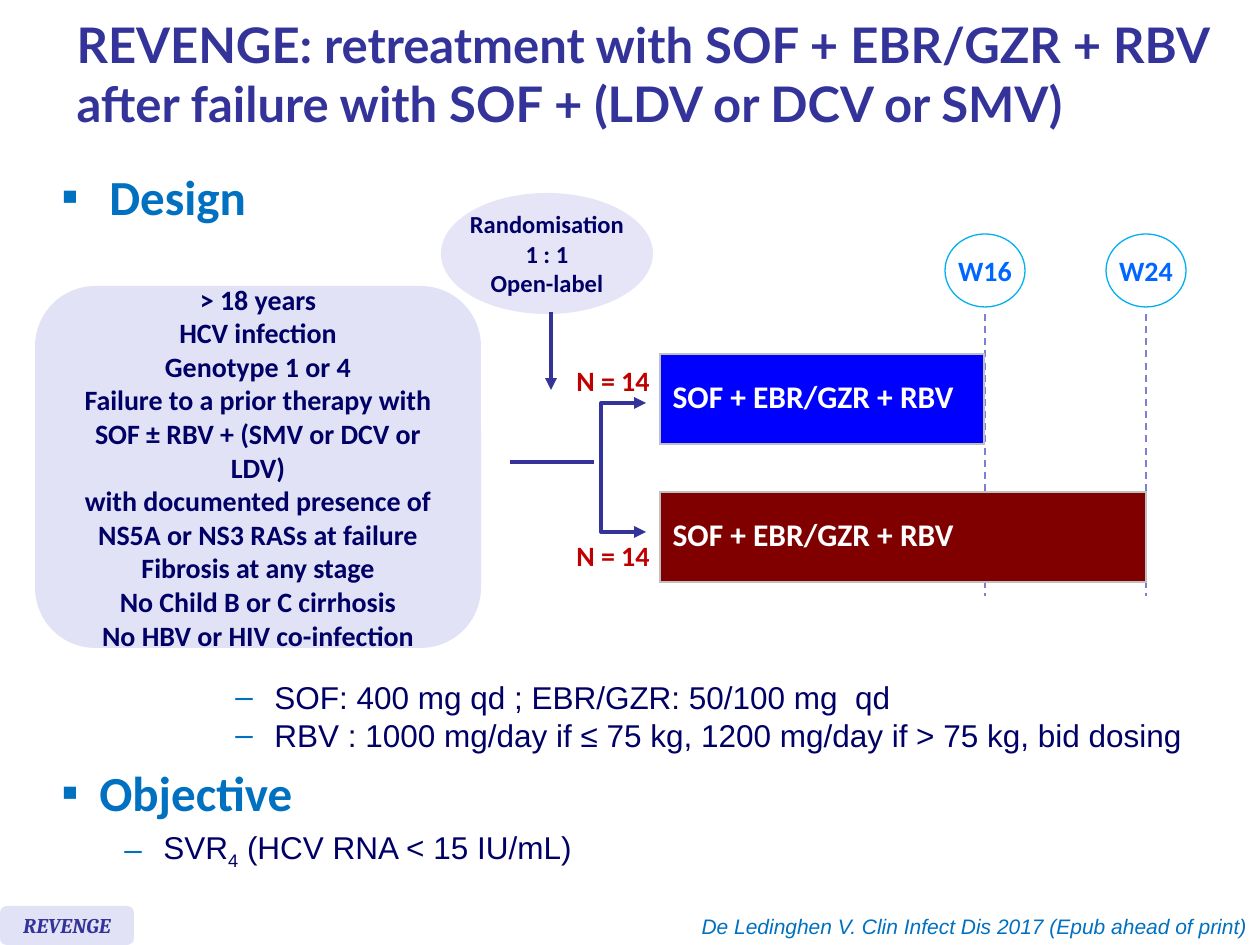
from lxml import etree
from pptx import Presentation
from pptx.dml.color import RGBColor
from pptx.enum.dml import MSO_LINE
from pptx.enum.shapes import MSO_CONNECTOR, MSO_SHAPE
from pptx.enum.text import MSO_ANCHOR, MSO_AUTO_SIZE, PP_ALIGN
from pptx.oxml.ns import qn
from pptx.util import Emu, Pt

# Content
TITLE = ("REVENGE: retreatment with SOF + EBR/GZR + RBV "
         "after failure with SOF + (LDV or DCV or SMV)")
CRITERIA = [
    "> 18 years", "HCV infection", "Genotype 1 or 4",
    "Failure to a prior therapy with", "SOF ± RBV + (SMV or DCV or LDV)",
    "with documented presence of", "NS5A or NS3 RASs at failure",
    "Fibrosis at any stage", "No Child B or C cirrhosis",
    "No HBV or HIV co-infection",
]
RANDOMISATION = ["Randomisation", "1 : 1", "Open-label"]
REGIMEN = "SOF + EBR/GZR + RBV"
ARMS = [  # bar top, bar width, bar colour, label top, label
    (354, 324, "0000FF", 357, "N = 14"),
    (492, 486, "800000", 532, "N = 14"),
]
WEEKS = [("W16", 985), ("W24", 1146)]  # label, centre
DOSES = ["SOF: 400 mg qd ; EBR/GZR: 50/100 mg  qd",
         "RBV : 1000 mg/day if ≤ 75 kg, 1200 mg/day if > 75 kg, bid dosing"]
CITATION = "De Ledinghen V. Clin Infect Dis 2017 (Epub ahead of print)"

NAVY, INDIGO, BLUE, LAVENDER = "000066", "333399", "0070C0", "E2E2F6"
BAR_LEFT, BAR_HEIGHT = 660, 90


def px(length):
    return Emu(round(length * 914400 / 126))


def color(value):
    return RGBColor.from_string(value)


def style(paragraph, size, ink, font="Calibri", bold=True, italic=False,
          align=PP_ALIGN.LEFT):
    paragraph.alignment = align
    for run in paragraph.runs:
        run.font.name, run.font.size = font, Pt(size)
        run.font.bold, run.font.italic = bold, italic
        run.font.color.rgb = color(ink)


def write(shape, lines, size, ink, wrap=False, anchor=MSO_ANCHOR.TOP, **look):
    frame = shape.text_frame
    frame.text = "\n".join(lines)
    frame.word_wrap = wrap
    frame.auto_size = MSO_AUTO_SIZE.NONE
    frame.vertical_anchor = anchor
    for paragraph in frame.paragraphs:
        style(paragraph, size, ink, **look)
    return frame


def add_text(slide, box, lines, size, ink, **look):
    shape = slide.shapes.add_textbox(*map(px, box))
    return write(shape, lines, size, ink, **look)


def add_bullet(paragraph, mark, indent, left=None):
    properties = paragraph._p.get_or_add_pPr()
    properties.set("marL", str(px(left or indent)))
    properties.set("indent", str(-px(indent)))
    bullet_color = etree.SubElement(properties, qn("a:buClr"))
    etree.SubElement(bullet_color, qn("a:srgbClr"), val=BLUE)
    etree.SubElement(properties, qn("a:buFont"), typeface="Arial")
    etree.SubElement(properties, qn("a:buChar"), char=mark)


def add_panel(slide, kind, box, fill, lines, size, ink, outline=None, **look):
    shape = slide.shapes.add_shape(kind, *map(px, box))
    shape.shadow.inherit = False
    shape.fill.solid()
    shape.fill.fore_color.rgb = color(fill)
    if outline:
        shape.line.color.rgb = color(outline)
        shape.line.width = Pt(0.75)
    else:
        shape.line.fill.background()
    return write(shape, lines, size, ink, anchor=MSO_ANCHOR.MIDDLE,
                 align=PP_ALIGN.CENTER, **look)


def set_line(shape, ink, width, *arrow_ends):
    shape.line.color.rgb = color(ink)
    shape.line.width = Pt(width)
    for end in arrow_ends:
        etree.SubElement(shape.line._get_or_add_ln(), qn(f"a:{end}"),
                         type="triangle")


def add_line(slide, start, end, ink, width, *arrow_ends):
    line = slide.shapes.add_connector(MSO_CONNECTOR.STRAIGHT,
                                      *map(px, start + end))
    etree.SubElement(line._element.spPr, qn("a:effectLst"))
    set_line(line, ink, width, *arrow_ends)
    return line


def add_bar(slide, top, width, fill):
    box = (BAR_LEFT, top, width, BAR_HEIGHT)
    table = slide.shapes.add_table(1, 1, *map(px, box)).table
    table.first_row = table.horz_banding = False
    cell = table.cell(0, 0)
    cell.text = REGIMEN
    cell.vertical_anchor = MSO_ANCHOR.MIDDLE
    paragraph = cell.text_frame.paragraphs[0]
    paragraph.line_spacing = 0.8
    style(paragraph, 18, "FFFFFF")
    properties = cell._tc.get_or_add_tcPr()
    for side in ("lnL", "lnR", "lnT", "lnB"):
        border = etree.SubElement(properties, qn(f"a:{side}"), w=str(Pt(1)))
        border_fill = etree.SubElement(border, qn("a:solidFill"))
        etree.SubElement(border_fill, qn("a:srgbClr"), val="C0C0C0")
    cell.fill.solid()
    cell.fill.fore_color.rgb = color(fill)


def main():
    presentation = Presentation()
    presentation.slide_width, presentation.slide_height = px(1260), px(945)
    slide = presentation.slides.add_slide(presentation.slide_layouts[5])

    # Title
    title = slide.shapes.title
    title.left, title.top, title.width, title.height = map(px, (64, 6, 1181, 135))
    write(title, [TITLE], 28, INDIGO, wrap=True, anchor=MSO_ANCHOR.MIDDLE,
          font="Lato")

    # Week markers
    for label, center in WEEKS:
        line = add_line(slide, (center, 314), (center, 596), "7E7ED4", 1)
        line.line.dash_style = MSO_LINE.DASH
        add_panel(slide, MSO_SHAPE.OVAL, (center - 40, 234, 80, 73), "FFFFFF",
                  [label], 16, "0066FF", outline="00B0F0")

    # Treatment arms
    for top, width, fill, label_top, label in ARMS:
        add_bar(slide, top, width, fill)
        add_text(slide, (563, label_top, 100, 47), [label], 16, "C00000",
                 align=PP_ALIGN.CENTER)

    # Population and randomisation
    criteria = add_panel(slide, MSO_SHAPE.ROUNDED_RECTANGLE,
                         (35, 286, 446, 362), LAVENDER, CRITERIA, 16, NAVY,
                         wrap=True)
    criteria.margin_left = criteria.margin_right = px(20)
    criteria.margin_top = criteria.margin_bottom = 0
    add_panel(slide, MSO_SHAPE.OVAL, (441, 193, 212, 121), "E5E5F7",
              RANDOMISATION, 14, NAVY)

    # Flow arrows
    builder = slide.shapes.build_freeform(px(646), px(403))
    builder.add_line_segments(
        [(px(x), px(y)) for x, y in [(601, 403), (601, 532), (646, 532)]],
        close=False)
    fork = builder.convert_to_shape()
    fork.shadow.inherit = False
    fork.fill.background()
    set_line(fork, INDIGO, 2.25, "headEnd", "tailEnd")
    add_line(slide, (510, 462), (594, 462), INDIGO, 2.25)
    add_line(slide, (551, 312), (551, 390), INDIGO, 2.25, "tailEnd")

    # Design, doses and objective
    design = add_text(slide, (49, 160, 250, 79), ["Design"], 28, BLUE, wrap=True)
    add_bullet(design.paragraphs[0], "▪", 48)
    doses = add_text(slide, (223, 672, 992, 89), DOSES, 18, NAVY, wrap=True,
                     font="Arial", bold=False)
    for paragraph in doses.paragraphs:
        add_bullet(paragraph, "‒", 39)
    objective = add_text(slide, (49, 756, 1211, 113), ["Objective", ""], 28,
                         BLUE, wrap=True)
    heading, endpoint = objective.paragraphs
    add_bullet(heading, "▪", 38)
    for text in ("SVR", "4", " (HCV RNA < 15 IU/mL)"):
        endpoint.add_run().text = text
    style(endpoint, 18, NAVY, font="Arial", bold=False)
    endpoint.runs[1].font._element.set("baseline", "-25000")
    endpoint.space_before = Pt(4)
    add_bullet(endpoint, "–", 39, left=102)

    # Footer
    add_panel(slide, MSO_SHAPE.ROUNDED_RECTANGLE, (0, 906, 134, 39), LAVENDER,
              ["REVENGE"], 12, INDIGO, font="Cambria", italic=True)
    add_text(slide, (678, 907, 582, 38), [CITATION], 12, BLUE, font="Arial",
             bold=False, italic=True, align=PP_ALIGN.RIGHT)

    presentation.save("out.pptx")


if __name__ == "__main__":
    main()
